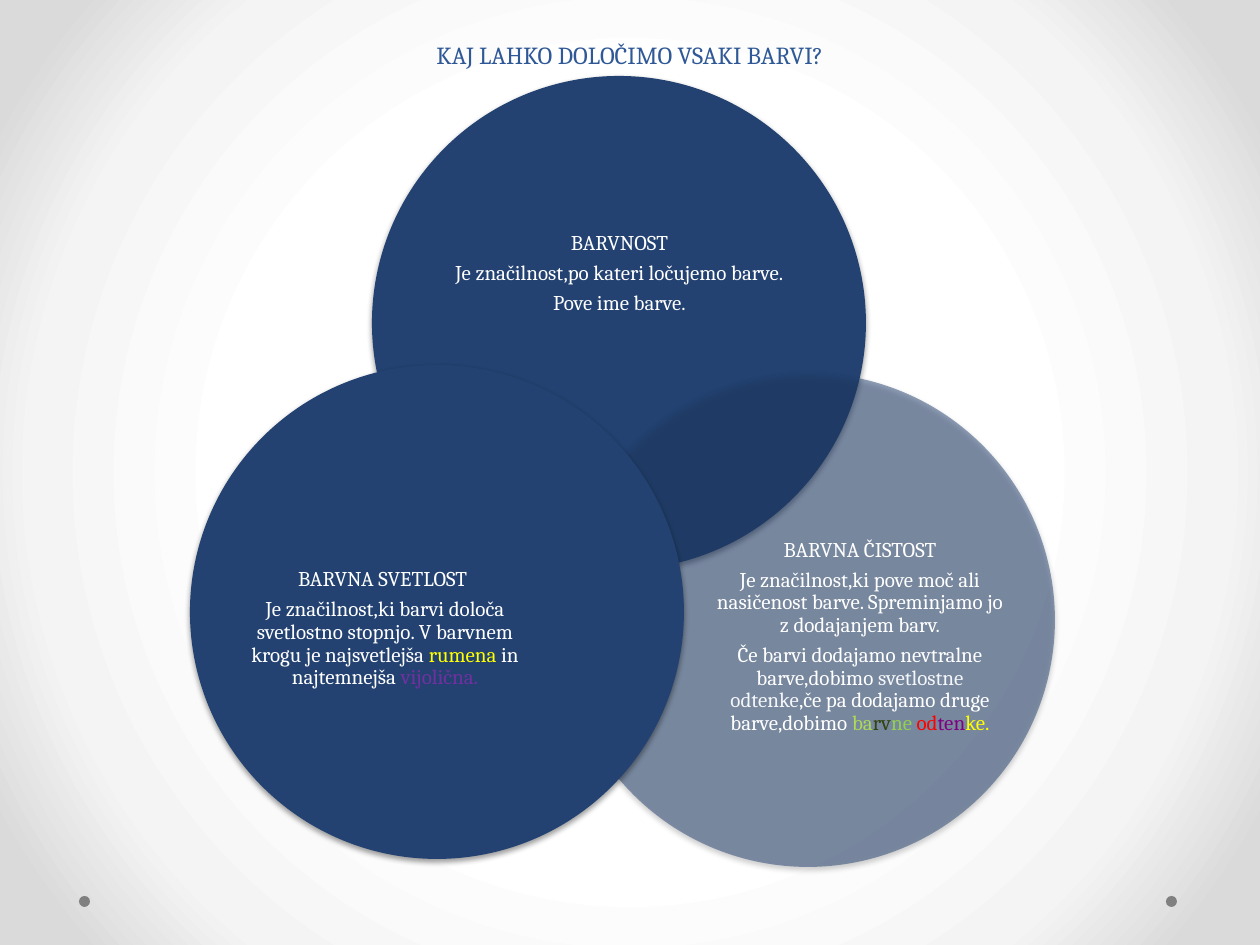
from dataclasses import dataclass

from pptx import Presentation
from pptx.dml.color import RGBColor
from pptx.enum.shapes import MSO_SHAPE as Shape
from pptx.enum.text import MSO_ANCHOR as Anchor, PP_ALIGN as Align
from pptx.oxml import parse_xml
from pptx.oxml.ns import nsdecls, qn
from pptx.util import Emu, Pt

EMU_PER_PX = 914400 / 126


@dataclass(frozen=True)
class Theme:
    font: str = "Cambria"
    title_size: int = 14
    body_size: int = 12
    title: str = "2F5897"
    circle: str = "234271"
    dot: str = "808080"
    white: str = "FFFFFF"
    pale: str = "F4F6F9"
    yellow: str = "FFFF00"
    violet: str = "7030A0"
    lime: str = "ABD958"
    olive: str = "314410"
    green: str = "92D050"
    red: str = "FF0000"
    purple: str = "800080"
    backdrop: tuple = ((50, "FFFFFF"), (76, "F4F4F4"), (92, "DADADA"))


def px(length):
    return Emu(round(length * EMU_PER_PX))


def write_text(frame, paragraphs, *, font, size, color, anchor, margin=None,
               line_spacing=None, space_after=0):
    frame.word_wrap = True
    frame.vertical_anchor = anchor
    if margin is not None:
        frame.margin_left = frame.margin_right = px(margin)
        frame.margin_top = frame.margin_bottom = px(margin)
    for index, runs in enumerate(paragraphs):
        paragraph = frame.add_paragraph() if index else frame.paragraphs[0]
        paragraph.alignment = Align.CENTER
        paragraph.line_spacing = line_spacing
        paragraph.space_after = Pt(space_after)
        for item in [runs] if isinstance(runs, str) else runs:
            text, run_color = (item, color) if isinstance(item, str) else item
            run = paragraph.add_run()
            run.text = text
            run.font.name = font
            run.font.size = Pt(size)
            run.font.color.rgb = RGBColor.from_string(run_color)


class SlideBuilder:
    """Draws styled elements on the current slide."""

    def __init__(self, slide, theme):
        self.slide = slide
        self.theme = theme

    def background(self):
        self.slide.background.fill.gradient()
        gradient = next(self.slide.element.iter(qn("a:gradFill")))
        stops = "".join(
            f'<a:gs pos="{position * 1000}"><a:srgbClr val="{color}"/></a:gs>'
            for position, color in self.theme.backdrop)
        gradient.getparent().replace(gradient, parse_xml(
            f'<a:gradFill {nsdecls("a")} rotWithShape="1"><a:gsLst>{stops}</a:gsLst>'
            '<a:path path="circle"><a:fillToRect l="50000" t="50000" r="50000" b="50000"/>'
            '</a:path></a:gradFill>'))

    def ellipse(self, left, top, diameter, color):
        shape = self.slide.shapes.add_shape(
            Shape.OVAL, px(left), px(top), px(diameter), px(diameter))
        shape.shadow.inherit = False
        shape.fill.solid()
        shape.fill.fore_color.rgb = RGBColor.from_string(color)
        shape.line.fill.background()
        return shape

    def venn_circle(self, left, top, opacity=100):
        properties = self.ellipse(left, top, 494, self.theme.circle).element.spPr
        if opacity < 100:
            properties.find(f'{qn("a:solidFill")}/{qn("a:srgbClr")}').append(
                parse_xml(f'<a:alpha {nsdecls("a")} val="{opacity * 1000}"/>'))
        properties.find(qn("a:effectLst")).append(parse_xml(
            f'<a:outerShdw {nsdecls("a")} blurRad="{Pt(3.1)}" dist="{Pt(1.6)}" '
            'dir="5400000" rotWithShape="0"><a:srgbClr val="000000">'
            '<a:alpha val="38000"/></a:srgbClr></a:outerShdw>'))

    def text_box(self, bounds, paragraphs, **text_format):
        box = self.slide.shapes.add_textbox(*map(px, bounds))
        write_text(box.text_frame, paragraphs, font=self.theme.font, **text_format)

    def title(self, text):
        self.text_box((63, 0, 1134, 76), [text], size=self.theme.title_size,
                      color=self.theme.title, anchor=Anchor.BOTTOM)

    def body(self, bounds, paragraphs):
        self.text_box(bounds, paragraphs, size=self.theme.body_size,
                      color=self.theme.white, anchor=Anchor.MIDDLE, margin=0,
                      line_spacing=0.9, space_after=4.2)


def main():
    presentation = Presentation()
    presentation.slide_width, presentation.slide_height = px(1260), px(945)
    theme = Theme()
    builder = SlideBuilder(
        presentation.slides.add_slide(presentation.slide_layouts[6]), theme)

    builder.background()
    for left in (1166, 79):
        builder.ellipse(left, 896, 11, theme.dot)
    builder.title("KAJ LAHKO DOLOČIMO VSAKI BARVI?")

    builder.venn_circle(372, 76)
    builder.body((438, 163, 363, 222), [
        "BARVNOST",
        "Je značilnost,po kateri ločujemo barve.",
        "Pove ime barve.",
    ])

    builder.venn_circle(561, 373, opacity=50)
    builder.body((712, 501, 296, 272), [
        "BARVNA ČISTOST",
        "Je značilnost,ki pove moč ali nasičenost barve. Spreminjamo jo z dodajanjem barv.",
        ["Če barvi dodajamo nevtralne barve,dobimo ",
         ("svetlostne odtenke", theme.pale),
         ",če pa dodajamo druge barve,dobimo ",
         ("ba", theme.lime), ("rv", theme.olive), ("ne ", theme.green),
         ("od", theme.red), ("ten", theme.purple), ("ke.", theme.yellow)],
    ])

    builder.venn_circle(190, 365)
    builder.body((237, 493, 296, 272), [
        "BARVNA SVETLOST ",
        ["Je značilnost,ki barvi določa svetlostno stopnjo. V barvnem krogu je najsvetlejša ",
         ("rumena", theme.yellow), " in najtemnejša ", ("vijolična.", theme.violet)],
    ])

    presentation.save("out.pptx")


if __name__ == "__main__":
    main()
